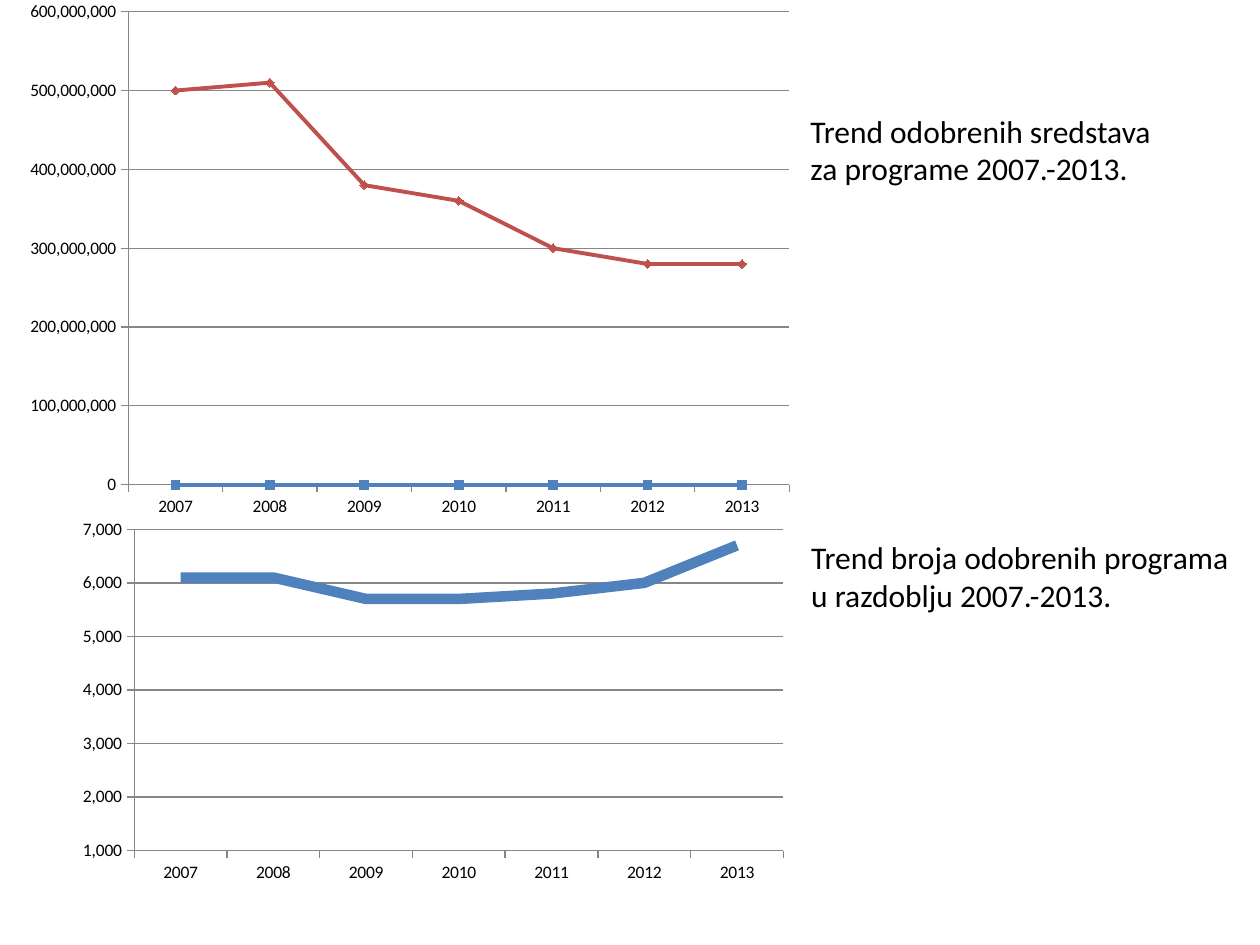
"""Build a slide with two line charts of approved funds and programmes, 2007-2013."""
from lxml import etree
from pptx import Presentation, util as u
from pptx.chart.data import CategoryChartData
from pptx.enum import chart as c, text
from pptx.dml.color import RGBColor

COLORS = {"blue": "4F81BD", "red": "C0504D", "axis": "868686", "text": "000000"}
FONT = "Calibri"
YEARS = [str(year) for year in range(2007, 2014)]
SQUARE, DIAMOND = c.XL_MARKER_STYLE.SQUARE, c.XL_MARKER_STYLE.DIAMOND

CHARTS = [
    {
        "frame": (17.28, 0.72, 524.16, 311.76),
        "plot": (52, 6, 381, 270.3),
        "scale": (0, 600_000_000, 100_000_000),
        "line": 2.25,
        "series": [
            ("Series 1", [0] * 7, "blue", SQUARE),
            ("Series 2", [500_000_000, 510_000_000, 380_000_000, 360_000_000,
                          300_000_000, 280_000_000, 280_000_000], "red", DIAMOND),
        ],
    },
    {
        "frame": (39.6, 292.32, 416.88, 216),
        "plot": (37.1, 10.2, 371, 183.6),
        "scale": (1000, 7000, 1000),
        "line": 6,
        "series": [("Series 1", [6100, 6100, 5700, 5700, 5800, 6000, 6700],
                    "blue", c.XL_MARKER_STYLE.NONE)],
    },
]
CAPTIONS = [
    ("Trend odobrenih sredstava za programe 2007.-2013.", (456, 60.2, 226.8, 51.12)),
    ("Trend broja odobrenih programa u razdoblju 2007.-2013.", (456.48, 303.84, 254.88, 51.12)),
]


def color(name):
    return RGBColor.from_string(COLORS[name])


def points(frame):
    return [u.Pt(length) for length in frame]


def style_font(font, size):
    font.name, font.size = FONT, u.Pt(size)
    font.color.rgb = color("text")


def style_line(line, name, width):
    line.color.rgb = color(name)
    line.width = u.Pt(width)


def set_plot_area(chart, plot, frame):
    area = chart._chartSpace.chart.plotArea
    namespace = area.nsmap["c"]
    for old in area.findall(f"{{{namespace}}}layout"):
        area.remove(old)
    layout = etree.Element(f"{{{namespace}}}layout")
    manual = etree.SubElement(layout, f"{{{namespace}}}manualLayout")
    settings = [("layoutTarget", "inner"), ("xMode", "edge"), ("yMode", "edge")]
    shares = [length / whole for length, whole in zip(plot, frame[2:] * 2)]
    for tag, value in settings + list(zip("xywh", shares)):
        etree.SubElement(manual, f"{{{namespace}}}{tag}").set("val", str(value))
    area.insert(0, layout)


def add_line_chart(page, item):
    data = CategoryChartData(number_format="#,##0")
    data.categories = YEARS
    for name, values, _, _ in item["series"]:
        data.add_series(name, values)
    chart = page.shapes.add_chart(
        c.XL_CHART_TYPE.LINE_MARKERS, *points(item["frame"]), data).chart
    chart.has_legend = chart.has_title = False
    style_font(chart.font, 10)
    set_plot_area(chart, item["plot"], item["frame"])
    chart.plots[0].vary_by_categories = False
    values_axis = chart.value_axis
    values_axis.minimum_scale, values_axis.maximum_scale, values_axis.major_unit = item["scale"]
    values_axis.tick_labels.number_format = "#,##0"
    values_axis.tick_labels.number_format_is_linked = False
    values_axis.has_major_gridlines = True
    style_line(values_axis.major_gridlines.format.line, "axis", 0.75)
    for axis in (chart.category_axis, values_axis):
        axis.major_tick_mark = c.XL_TICK_MARK.OUTSIDE
        style_line(axis.format.line, "axis", 0.75)
    for series, (_, _, name, marker) in zip(chart.plots[0].series, item["series"]):
        series.smooth = False
        style_line(series.format.line, name, item["line"])
        series.marker.style = marker
        if marker != c.XL_MARKER_STYLE.NONE:
            series.marker.size = 5
            series.marker.format.fill.solid()
            series.marker.format.fill.fore_color.rgb = color(name)
            style_line(series.marker.format.line, name, 0.75)


def add_caption(page, wording, frame):
    box = page.shapes.add_textbox(*points(frame)).text_frame
    box.word_wrap = True
    box.auto_size = text.MSO_AUTO_SIZE.SHAPE_TO_FIT_TEXT
    box.text = wording
    style_font(box.paragraphs[0].font, 18)


def main():
    deck = Presentation()
    deck.slide_width, deck.slide_height = u.Pt(720), u.Pt(540)
    page = deck.slides.add_slide(deck.slide_layouts[6])
    for item in CHARTS:
        add_line_chart(page, item)
    for wording, frame in CAPTIONS:
        add_caption(page, wording, frame)
    deck.save("out.pptx")


if __name__ == "__main__":
    main()
